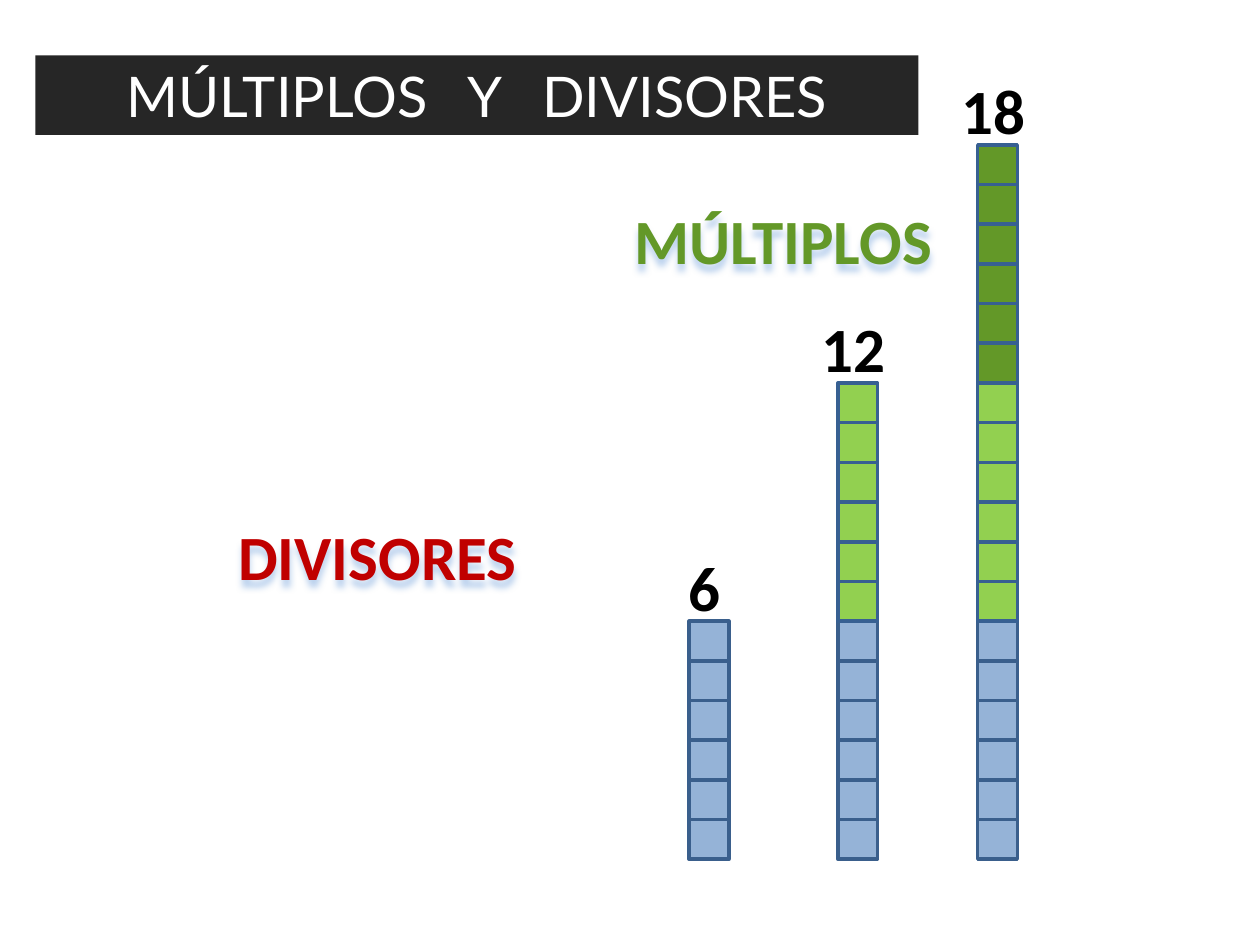
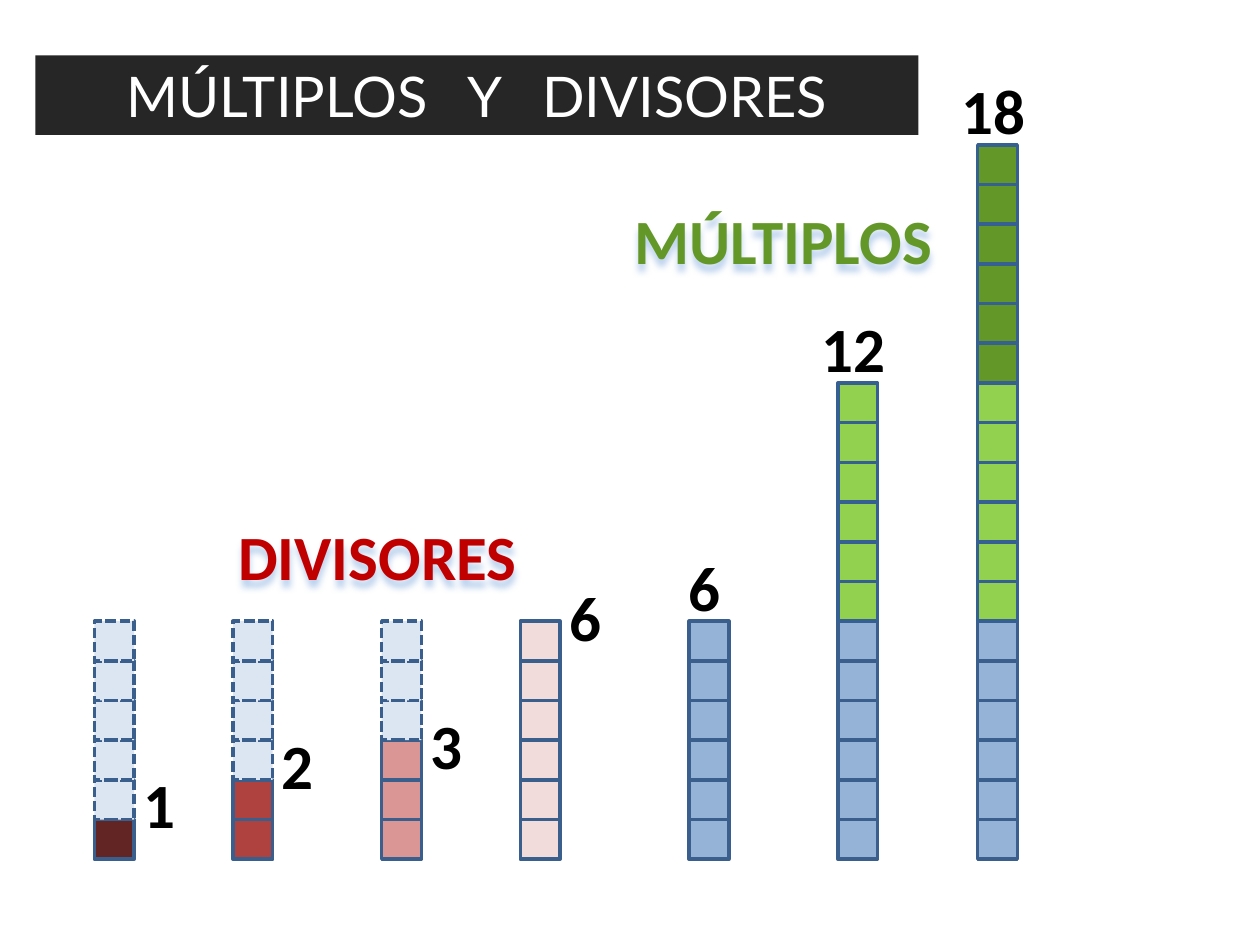
from lxml import etree
from pptx import Presentation
from pptx.dml.color import RGBColor
from pptx.enum.dml import MSO_LINE
from pptx.enum.shapes import MSO_SHAPE
from pptx.enum.text import MSO_ANCHOR, MSO_AUTO_SIZE, PP_ALIGN
from pptx.oxml.ns import qn
from pptx.util import Inches, Pt

RECT = MSO_SHAPE.RECTANGLE
DASH = MSO_LINE.SQUARE_DOT
CENTER = PP_ALIGN.CENTER
MIDDLE = MSO_ANCHOR.MIDDLE
GROW = MSO_AUTO_SIZE.SHAPE_TO_FIT_TEXT

BLACK = RGBColor(0x00, 0x00, 0x00)
WHITE = RGBColor(0xFF, 0xFF, 0xFF)
CHARCOAL = RGBColor(0x26, 0x26, 0x26)
BLUE = RGBColor(0x95, 0xB3, 0xD7)
PALE_BLUE = RGBColor(0xDC, 0xE6, 0xF2)
LIME = RGBColor(0x92, 0xD0, 0x50)
GREEN = RGBColor(0x63, 0x98, 0x28)
RED = RGBColor(0xC0, 0x00, 0x00)
MAROON = RGBColor(0x63, 0x25, 0x23)
BRICK = RGBColor(0xAF, 0x42, 0x3F)
ROSE = RGBColor(0xD9, 0x96, 0x94)
PALE_ROSE = RGBColor(0xF2, 0xDC, 0xDB)
BLUE_EDGE = RGBColor(0x3A, 0x5F, 0x8C)
GREEN_EDGE = RGBColor(0x37, 0x60, 0x92)
SHADOW = "8EB4E3"

TITLE_WORDS = ("MÚLTIPLOS", "Y", "DIVISORES")
WORD_GAP = "1450"  # extra width of the title's spaces, in hundredths of a point

NUMBER = 6
CELL = Inches(1.89) // NUMBER
BASE = Inches(6.82)
LABEL_H = Inches(0.71)
NUMBER_W = Inches(0.87)

# left edge, colours of the bands from the bottom up
MULTIPLES = [
    (5.47, [BLUE]),
    (6.65, [BLUE, LIME]),
    (7.76, [BLUE, LIME, GREEN]),
]
# left edge, divisor, colour, rise of the label above the filled cells
DIVISORS = [
    (0.75, 1, MAROON, 0.48),
    (1.85, 2, BRICK, 0.47),
    (3.03, 3, ROSE, 0.32),
    (4.13, 6, PALE_ROSE, 0.39),
]


def add_title(slide):
    title = slide.shapes.title
    title.left, title.top = Inches(0.28), Inches(0.44)
    title.width, title.height = Inches(7.01), Inches(0.63)
    title.fill.solid()
    title.fill.fore_color.rgb = CHARCOAL
    title.text_frame.vertical_anchor = MIDDLE
    p = title.text_frame.paragraphs[0]
    p.alignment = CENTER
    for i, word in enumerate(TITLE_WORDS):
        for text in ((" ", word) if i else (word,)):
            r = p.add_run()
            r.text = text
            r.font.name, r.font.size = "Lato", Pt(32)
            r.font.color.rgb = WHITE
            if text == " ":
                r.font._element.set("spc", WORD_GAP)


def add_label(slide, text, left, top, width, color=BLACK):
    sp = slide.shapes.add_textbox(left, top, width, LABEL_H)
    tf = sp.text_frame
    tf.word_wrap = True
    tf.auto_size = GROW
    tf.text = text
    p = tf.paragraphs[0]
    p.alignment = CENTER
    font = p.runs[0].font
    font.name, font.size, font.bold = "Calibri", Pt(36), True
    font.color.rgb = color
    return sp


def add_heading(slide, text, left, top, color):
    """Add a coloured word with a soft blue shadow below it."""
    sp = add_label(slide, text, left, top, Inches(2.91), color)
    effects = etree.SubElement(sp._element.spPr, qn("a:effectLst"))
    shadow = etree.SubElement(effects, qn("a:outerShdw"), blurRad="50800",
                              dist="50800", dir="5400000", algn="tl", rotWithShape="0")
    tint = etree.SubElement(shadow, qn("a:srgbClr"), val=SHADOW)
    etree.SubElement(tint, qn("a:alpha"), val="60000")


def add_stack(slide, left, cells):
    """Pile up cells, given as (fill, edge, dash), from the base line."""
    group = slide.shapes.add_group_shape()
    for i, (fill, edge, dash) in enumerate(cells, start=1):
        sp = group.shapes.add_shape(RECT, left, BASE - i * CELL, CELL, CELL)
        sp.shadow.inherit = False
        sp.fill.solid()
        sp.fill.fore_color.rgb = fill
        sp.line.color.rgb = edge
        sp.line.width = Pt(2)
        if dash:
            sp.line.dash_style = dash


def add_multiples(slide):
    for x, bands in MULTIPLES:
        left = Inches(x)
        cells = [(color, BLUE_EDGE if color == BLUE else GREEN_EDGE, None)
                 for color in bands for _ in range(NUMBER)]
        add_stack(slide, left, cells)
        top = BASE - len(cells) * CELL
        add_label(slide, str(len(cells)), left - Inches(0.31), top - Inches(0.63), NUMBER_W)


def add_divisors(slide):
    for x, divisor, color, rise in DIVISORS:
        left = Inches(x)
        filled = [(color, BLUE_EDGE, None)] * divisor
        empty = [(PALE_BLUE, BLUE_EDGE, DASH)] * (NUMBER - divisor)
        add_stack(slide, left, filled + empty)
        top = BASE - divisor * CELL
        add_label(slide, str(divisor), left + Inches(0.08), top - Inches(rise), NUMBER_W)


def add_base_slide(prs):
    slide = prs.slides.add_slide(prs.slide_layouts.get_by_name("Title Only"))
    add_title(slide)
    add_multiples(slide)
    add_heading(slide, "MÚLTIPLOS", Inches(4.76), Inches(1.55), GREEN)
    add_heading(slide, "DIVISORES", Inches(1.54), Inches(4.06), RED)
    return slide


def main():
    prs = Presentation()
    prs.slide_width, prs.slide_height = Inches(10), Inches(7.5)
    add_base_slide(prs)
    add_divisors(add_base_slide(prs))
    prs.save("out.pptx")


if __name__ == "__main__":
    main()
